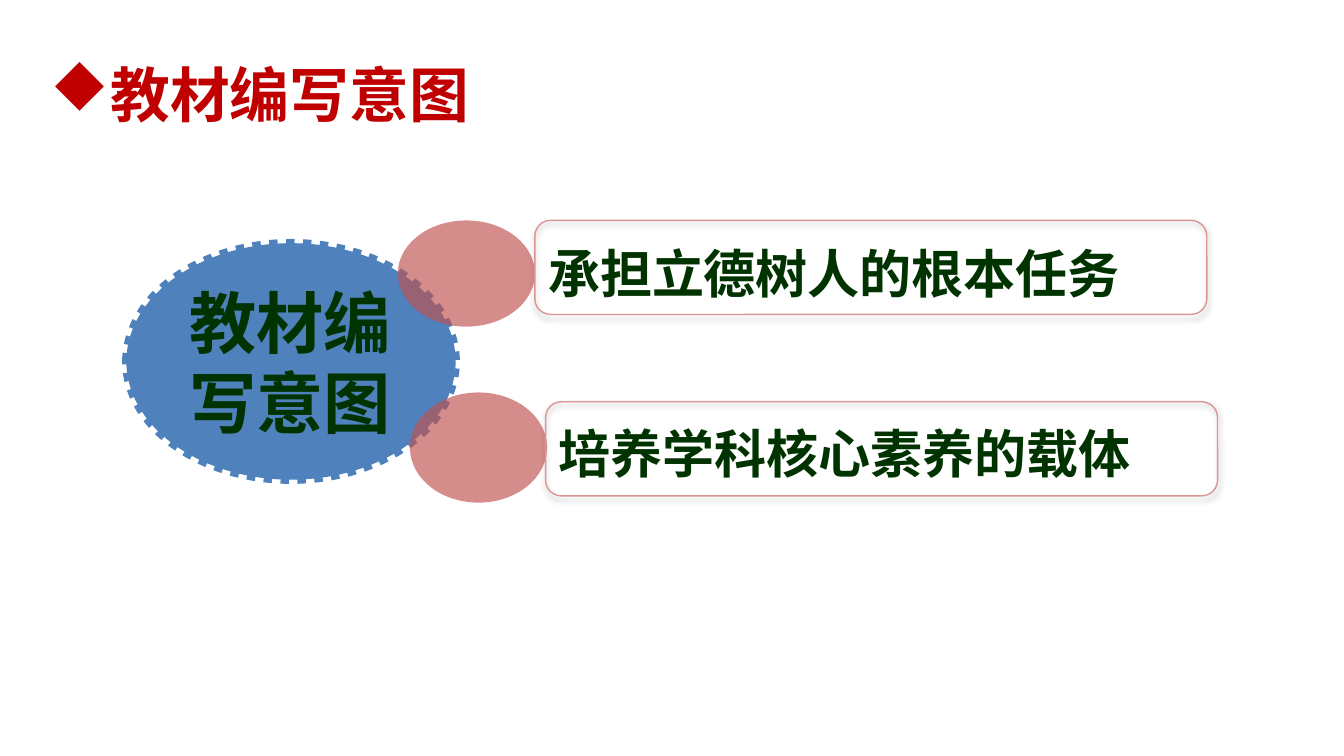
from lxml import etree
from pptx import Presentation
from pptx.dml.color import RGBColor
from pptx.enum.dml import MSO_LINE
from pptx.enum.shapes import MSO_SHAPE
from pptx.enum.text import MSO_ANCHOR, PP_ALIGN
from pptx.oxml import parse_xml
from pptx.oxml.ns import nsdecls, qn
from pptx.util import Inches, Pt

FONT = "Noto Sans CJK SC"
RED = RGBColor(0xC0, 0x00, 0x00)
BLUE = RGBColor(0x4F, 0x81, 0xBD)
ROSE = RGBColor(0xC0, 0x50, 0x4D)
PINK = RGBColor(0xD9, 0x96, 0x94)
DARK_GREEN = RGBColor(0x00, 0x33, 0x00)


def format_text(frame, size, color, align, line_spacing=1.0):
    frame.vertical_anchor = MSO_ANCHOR.MIDDLE
    for para in frame.paragraphs:
        para.alignment = align
        para.line_spacing = line_spacing
        for span in para.runs:
            span.font.size = Pt(size)
            span.font.bold = True
            span.font.color.rgb = color
            span.font.name = FONT
            east_asian = etree.SubElement(span.font._element, qn("a:ea"))
            east_asian.set("typeface", FONT)


def add_plain_shape(kind, left, top, width, height):
    shape = slide.shapes.add_shape(
        kind, Inches(left), Inches(top), Inches(width), Inches(height))
    shape.shadow.inherit = False
    return shape


# Widescreen 16:9 deck
deck = Presentation()
deck.slide_width = Inches(10)
deck.slide_height = Inches(10 * 9 / 16)
slide = deck.slides.add_slide(deck.slide_layouts[5])

# Title with a diamond bullet
title = slide.shapes.title
title.left, title.top = Inches(0), Inches(0.23)
title.width, title.height = Inches(3.82), Inches(0.94)
title.text_frame.text = "教材编写意图"
properties = title.text_frame.paragraphs[0]._p.get_or_add_pPr()
properties.set("marL", str(Inches(0.43)))
properties.set("indent", str(-Inches(0.38)))
etree.SubElement(properties, qn("a:buFont")).set("typeface", "Wingdings")
etree.SubElement(properties, qn("a:buChar")).set("char", "u")
format_text(title.text_frame, 32, RED, PP_ALIGN.CENTER)

# Central topic
topic = add_plain_shape(MSO_SHAPE.OVAL, 0.94, 1.81, 2.45, 1.76)
topic.fill.solid()
topic.fill.fore_color.rgb = BLUE
topic.line.color.rgb = BLUE
topic.line.width = Pt(4.5)
topic.line.dash_style = MSO_LINE.ROUND_DOT
frame = topic.text_frame
frame.margin_left = Inches(0.11)
frame.margin_right = frame.margin_top = frame.margin_bottom = 0
frame.text = "教材编\n写意图"
format_text(frame, 36, DARK_GREEN, PP_ALIGN.LEFT)

# Translucent linking circles
for left, top, height in [(3.05, 2.92, 0.82), (2.96, 1.64, 0.79)]:
    circle = add_plain_shape(MSO_SHAPE.OVAL, left, top, 1.02, height)
    circle.fill.solid()
    circle.fill.fore_color.rgb = ROSE
    circle.line.fill.background()
    color = circle.fill._xPr.find(qn("a:solidFill"))[0]
    etree.SubElement(color, qn("a:alpha")).set("val", "65000")

# Points, each with a shadowed frame
points = [("承担立德树人的根本任务", 3.98, 1.58, 5.16, 1.64),
          ("培养学科核心素养的载体", 4.06, 2.92, 4.94, 2.99)]
for text, left, top, width, outline_top in points:
    box = slide.shapes.add_textbox(
        Inches(left), Inches(top), Inches(width), Inches(0.76))
    box.text_frame.word_wrap = True
    box.text_frame.text = text
    format_text(box.text_frame, 27.9, DARK_GREEN, PP_ALIGN.LEFT, 1.3)

    outline = add_plain_shape(
        MSO_SHAPE.ROUNDED_RECTANGLE, left, outline_top, 5, 0.7)
    outline.fill.background()
    outline.line.color.rgb = PINK
    outline.line.width = Pt(0.75)
    effects = outline._element.spPr.find(qn("a:effectLst"))
    effects.append(parse_xml(
        f'<a:outerShdw {nsdecls("a")} blurRad="{Pt(3.1)}" dist="{Pt(1.8)}" '
        'dir="5400000" rotWithShape="0"><a:srgbClr val="000000">'
        '<a:alpha val="35000"/></a:srgbClr></a:outerShdw>'))

deck.save("out.pptx")
